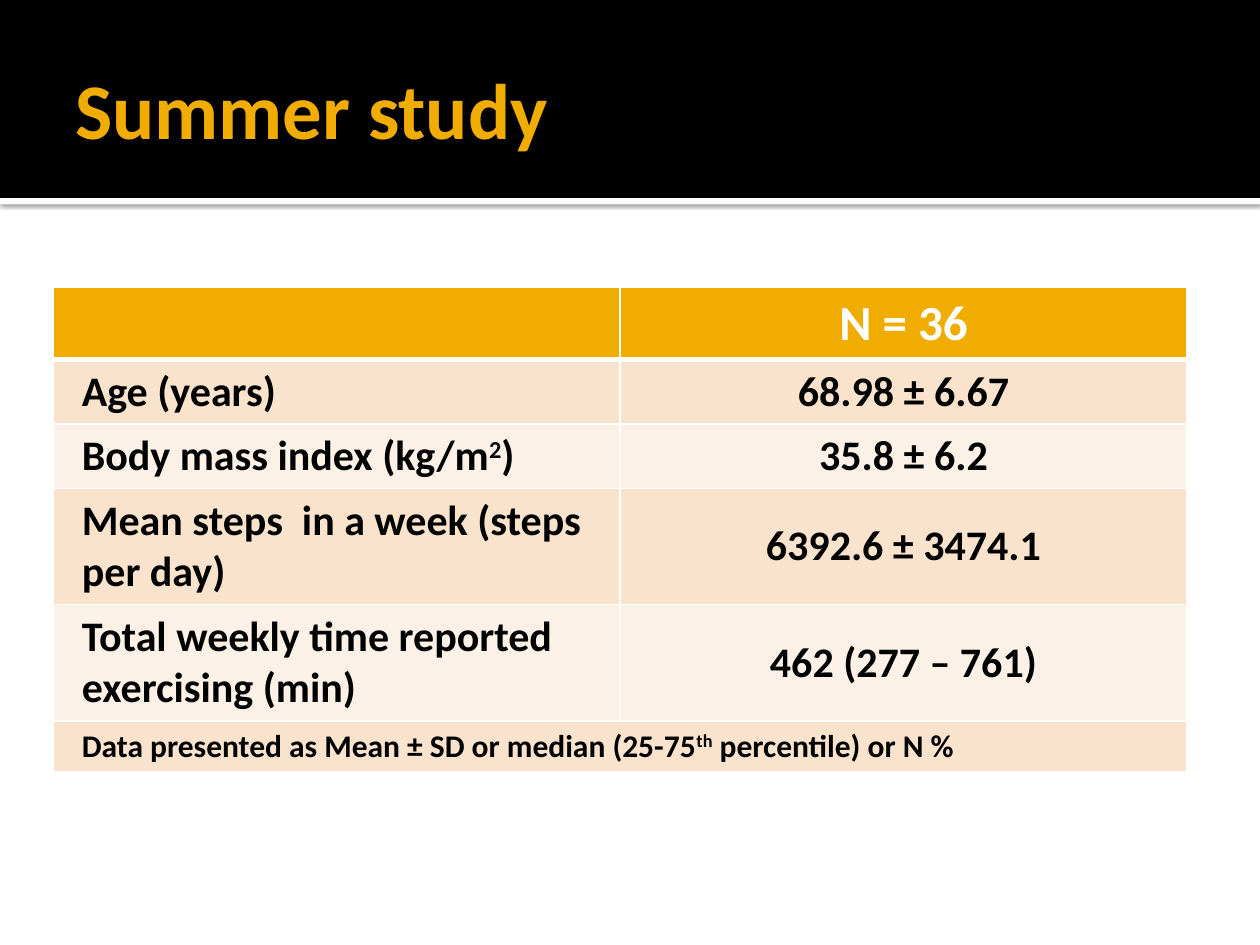
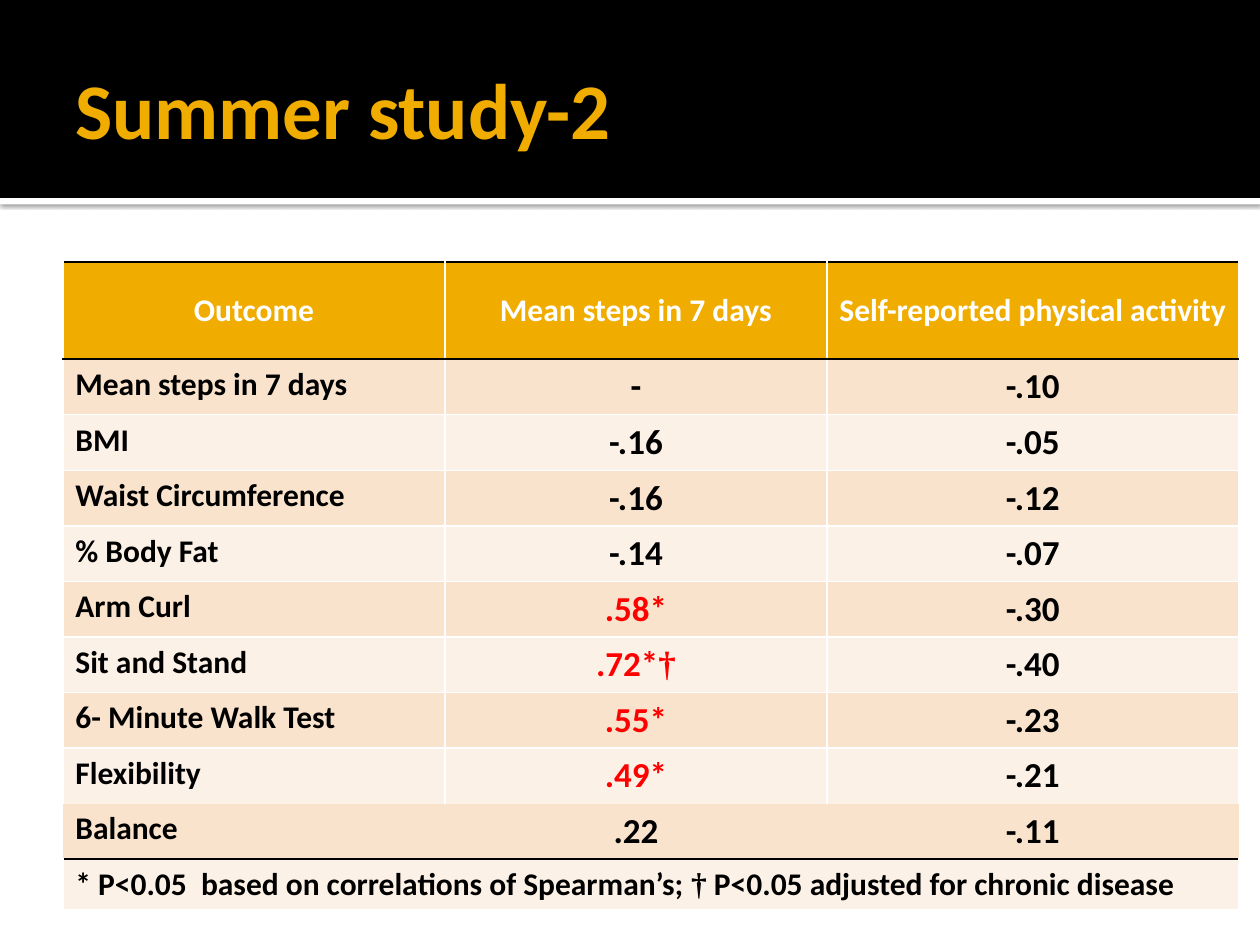
from lxml.etree import SubElement
from pptx import Presentation
from pptx.dml.color import RGBColor
from pptx.enum.shapes import MSO_SHAPE
from pptx.enum.text import MSO_ANCHOR, PP_ALIGN
from pptx.oxml.ns import qn
from pptx.util import Cm, Pt

BLACK = RGBColor(0x00, 0x00, 0x00)
WHITE = RGBColor(0xFF, 0xFF, 0xFF)
GOLD = RGBColor(0xF0, 0xAD, 0x00)
RED = RGBColor(0xFF, 0x00, 0x00)
PEACH = RGBColor(0xF9, 0xE3, 0xCC)
CREAM = RGBColor(0xFC, 0xF1, 0xE7)

THIN_WHITE = (WHITE, 1)
THICK_WHITE = (WHITE, 3)
THIN_BLACK = (BLACK, 1)

STUDY_ROWS = [
    ["", "N = 36"],
    ["Age (years)", "68.98 ± 6.67"],
    ["Body mass index (kg/m^2^)", "35.8 ± 6.2"],
    ["Mean steps  in a week (steps per day)", "6392.6 ± 3474.1"],
    ["Total weekly time reported exercising (min)", "462 (277 – 761)"],
    ["Data presented as Mean ± SD or median (25-75^th^ percentile) or N %"],
]

CORRELATION_ROWS = [
    ["Outcome", "Mean steps in 7 days", "Self-reported physical activity"],
    ["Mean steps in 7 days", "-", "-.10"],
    ["BMI", "-.16", "-.05"],
    ["Waist Circumference", "-.16", "-.12"],
    ["% Body Fat", "-.14", "-.07"],
    ["Arm Curl", ".58*", "-.30"],
    ["Sit and Stand", ".72*†", "-.40"],
    ["6- Minute Walk Test", ".55*", "-.23"],
    ["Flexibility", ".49*", "-.21"],
    ["Balance", ".22", "-.11"],
    ["* P<0.05  based on correlations of Spearman’s; † P<0.05 adjusted for chronic disease"],
]


class Deck:
    font = "Calibri"
    symbol_font = "Times New Roman"

    def __init__(self):
        self.prs = Presentation()
        self.prs.slide_width = Cm(25.4)
        self.prs.slide_height = Cm(19.05)
        self.s = None

    def slide(self, title):
        self.s = self.prs.slides.add_slide(self.prs.slide_layouts[6])
        rule = self.band(3.99, 0.13, WHITE)
        self.soft_shadow(rule)
        self.band(0, 3.99, BLACK)
        self.title(title)

    def band(self, top, height, color):
        sp = self.s.shapes.add_shape(
            MSO_SHAPE.RECTANGLE, 0, Cm(top), self.prs.slide_width, Cm(height))
        sp.shadow.inherit = False
        sp.fill.solid()
        sp.fill.fore_color.rgb = color
        sp.line.fill.background()
        return sp

    def soft_shadow(self, sp):
        effects = sp._element.spPr.find(qn("a:effectLst"))
        shadow = SubElement(effects, qn("a:outerShdw"), blurRad=str(Pt(2.5)),
                            dist=str(Pt(0.8)), dir="5400000", rotWithShape="0")
        color = SubElement(shadow, qn("a:srgbClr"), val=str(BLACK))
        SubElement(color, qn("a:alpha"), val="60000")

    def title(self, text):
        tf = self.s.shapes.add_textbox(Cm(1.27), Cm(0.43), Cm(22.86), Cm(3.48)).text_frame
        tf.word_wrap = True
        tf.vertical_anchor = MSO_ANCHOR.MIDDLE
        tf.margin_left = Cm(0.25)
        tf.margin_right = Cm(0.13)
        tf.text = text
        self.style(tf.paragraphs[0].runs[0], 45, GOLD)

    def style(self, r, size, color):
        r.font.name = self.symbol_font if r.text == "†" else self.font
        r.font.size = Pt(size)
        r.font.bold = True
        r.font.color.rgb = color

    def add_runs(self, p, text, size, color):
        for i, part in enumerate(text.split("^")):
            for piece in part.replace("†", "|†|").split("|"):
                if piece:
                    r = p.add_run()
                    r.text = piece
                    self.style(r, size, color)
                    if i % 2:
                        r._r.get_or_add_rPr().set("baseline", "30000")

    def border(self, cell, side, line):
        ln = SubElement(cell._tc.get_or_add_tcPr(), qn("a:ln" + side))
        if line is None:
            SubElement(ln, qn("a:noFill"))
            return
        color, width = line
        ln.set("w", str(Pt(width)))
        fill = SubElement(ln, qn("a:solidFill"))
        SubElement(fill, qn("a:srgbClr"), val=str(color))

    def table(self, left, top, widths, heights, rows, sizes, margin, rules,
              label_anchor=MSO_ANCHOR.MIDDLE, open_rows=()):
        header_size, label_size, value_size, note_size = sizes
        tbl = self.s.shapes.add_table(
            len(rows), len(widths), Cm(left), Cm(top),
            Cm(sum(widths)), Cm(sum(heights))).table
        for column, width in zip(tbl.columns, widths):
            column.width = Cm(width)
        for row, height in zip(tbl.rows, heights):
            row.height = Cm(height)
        last = len(rows) - 1
        tbl.cell(last, 0).merge(tbl.cell(last, len(widths) - 1))

        for i, texts in enumerate(rows):
            for j in range(len(widths)):
                cell = tbl.cell(i, j)
                side_line = None if i in open_rows else THIN_WHITE
                self.border(cell, "L", side_line)
                self.border(cell, "R", side_line)
                self.border(cell, "T", rules.get(i, THIN_WHITE))
                self.border(cell, "B", rules.get(i + 1, THIN_WHITE))
                cell.fill.solid()
                cell.fill.fore_color.rgb = GOLD if i == 0 else PEACH if i % 2 else CREAM
                cell.margin_left = cell.margin_right = Cm(margin)
                cell.vertical_anchor = label_anchor if i and j == 0 else MSO_ANCHOR.MIDDLE
                if j >= len(texts):
                    continue
                p = cell.text_frame.paragraphs[0]
                p.alignment = PP_ALIGN.CENTER if i == 0 or j else PP_ALIGN.LEFT
                if i == 0:
                    size, color = header_size, WHITE
                elif i == last:
                    size, color = note_size, BLACK
                elif j == 0:
                    size, color = label_size, BLACK
                else:
                    size, color = value_size, RED if "*" in texts[j] else BLACK
                self.add_runs(p, texts[j], size, color)


def main():
    deck = Deck()

    deck.slide("Summer study")
    deck.table(1.07, 5.8, [11.43] * 2, [1.45, 1.3, 1.3, 2.34, 2.34, 1.03],
               STUDY_ROWS, (28, 24, 24, 18), 0.58, {1: THICK_WHITE})

    deck.slide("Summer study-2")
    deck.table(1.27, 5.28, [7.7, 7.7, 8.3], [1.96] + [1.12] * 9 + [1.02],
               CORRELATION_ROWS, (18, 18, 20, 18), 0.25,
               {0: THIN_BLACK, 1: THIN_BLACK, 9: None, 10: THIN_BLACK},
               label_anchor=MSO_ANCHOR.TOP, open_rows=(9,))

    deck.prs.save("out.pptx")


if __name__ == "__main__":
    main()
